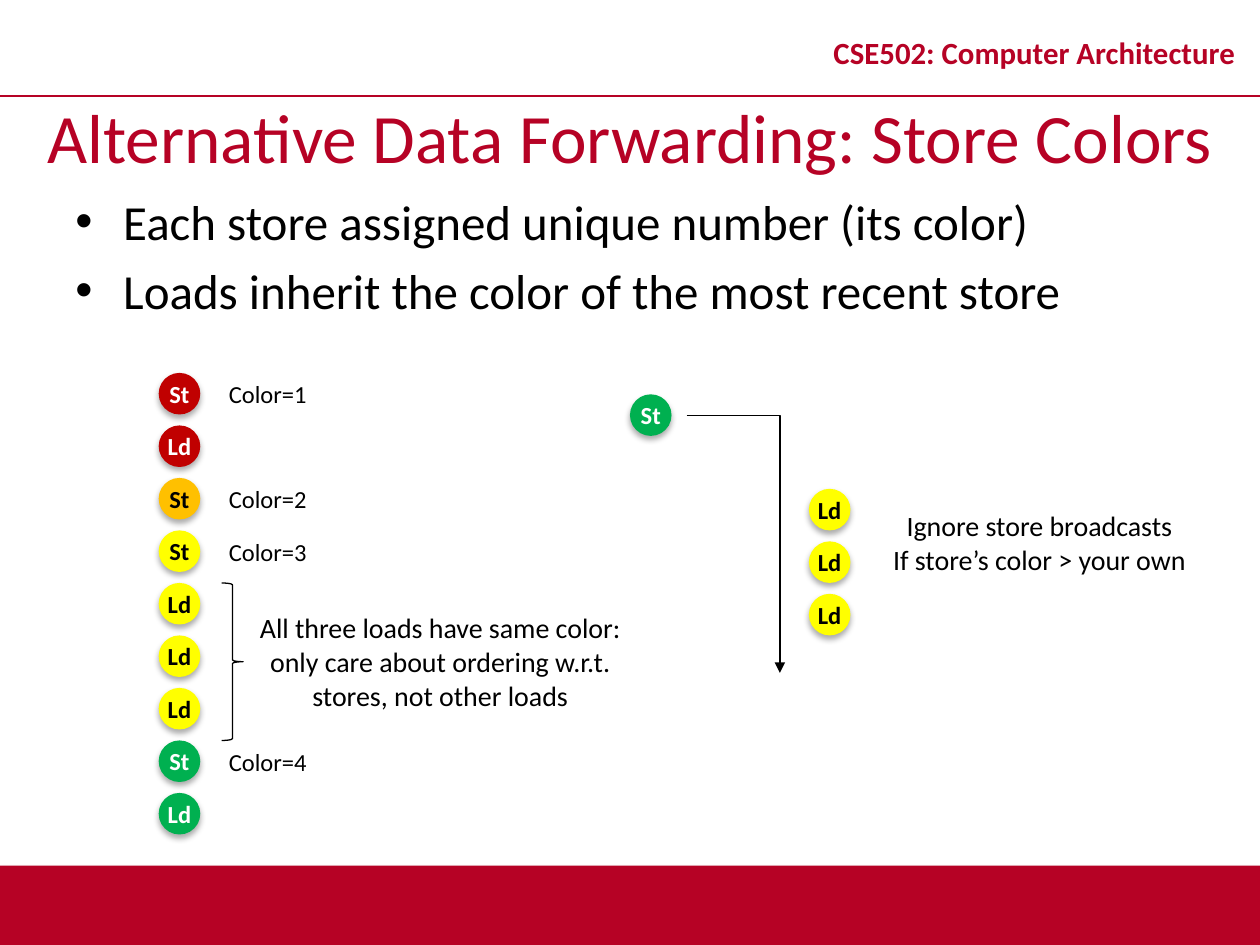
from pptx import Presentation
from pptx.dml.color import RGBColor
from pptx.enum.shapes import MSO_CONNECTOR, MSO_SHAPE
from pptx.enum.text import MSO_ANCHOR, MSO_AUTO_SIZE, PP_ALIGN
from pptx.oxml.ns import qn
from pptx.util import Inches, Pt
from lxml import etree

OVAL, RECT, BRACE = MSO_SHAPE.OVAL, MSO_SHAPE.RECTANGLE, MSO_SHAPE.RIGHT_BRACE
STRAIGHT = MSO_CONNECTOR.STRAIGHT
CENTER, LEFT = PP_ALIGN.CENTER, PP_ALIGN.LEFT
TOP, MIDDLE = MSO_ANCHOR.TOP, MSO_ANCHOR.MIDDLE

FONT = "Calibri"
CRIMSON = RGBColor(0xB6, 0x02, 0x25)
BLACK = RGBColor(0, 0, 0)
WHITE = RGBColor(0xFF, 0xFF, 0xFF)
RED = RGBColor(0xC0, 0, 0)
ORANGE = RGBColor(0xFF, 0xC0, 0)
YELLOW = RGBColor(0xFF, 0xFF, 0)
GREEN = RGBColor(0, 0xB0, 0x50)

COURSE = "CSE502: Computer Architecture"
TITLE = "Alternative Data Forwarding: Store Colors"
BULLETS = ["Each store assigned unique number (its color)",
           "Loads inherit the color of the most recent store"]

# (operation, fill, text color, label) in program order
PROGRAM = [
    ("St", RED, WHITE, "Color=1"),
    ("Ld", RED, WHITE, None),
    ("St", ORANGE, BLACK, "Color=2"),
    ("St", YELLOW, BLACK, "Color=3"),
    ("Ld", YELLOW, BLACK, None),
    ("Ld", YELLOW, BLACK, None),
    ("Ld", YELLOW, BLACK, None),
    ("St", GREEN, WHITE, "Color=4"),
    ("Ld", GREEN, WHITE, None),
]
LISTENING_LOADS = [("Ld", YELLOW, BLACK)] * 3
# (lines, box)
NOTES = [
    (["All three loads have same color:", "only care about ordering w.r.t.",
      "stores, not other loads"], (1.93, 4.8, 3.13, 0.91)),
    (["Ignore store broadcasts", "If store’s color > your own"],
     (6.92, 3.99, 2.66, 0.64)),
]
BROADCAST = [(5.45, 3.3), (6.19, 3.3), (6.19, 5.34)]

NODE = 0.33
STEP = 1.25 / 3
PROGRAM_X, PROGRAM_Y = 1.26, 2.96
LOADS_X, LOADS_Y = 6.42, 3.88

prs = Presentation()
prs.slide_width, prs.slide_height = Inches(10), Inches(7.5)
slide = prs.slides.add_slide(prs.slide_layouts[5])
shapes = slide.shapes


def inches(values):
    return [Inches(v) for v in values]


def write(frame, lines, size, color=BLACK, bold=False, align=CENTER,
          anchor=TOP, wrap=False):
    frame.word_wrap = wrap
    frame.vertical_anchor = anchor
    frame.text = "\n".join(lines)
    for paragraph in frame.paragraphs:
        paragraph.alignment = align
        style = {"name": FONT, "size": Pt(size), "bold": bold}
        for key, value in style.items():
            setattr(paragraph.font, key, value)
        paragraph.font.color.rgb = color


def add_text(box, lines, size, **style):
    frame = shapes.add_textbox(*inches(box)).text_frame
    write(frame, lines, size, **style)
    return frame


def add_shadowed(kind, box, fill, alpha, blur, distance):
    """Add a borderless filled shape with a soft shadow below it."""
    shape = shapes.add_shape(kind, *inches(box))
    shape.fill.solid()
    shape.fill.fore_color.rgb = fill
    shape.line.fill.background()
    shape.shadow.inherit = False
    effects = shape._element.spPr.find(qn("a:effectLst"))
    shadow = etree.SubElement(
        effects, qn("a:outerShdw"), blurRad=str(Pt(blur)),
        dist=str(Pt(distance)), dir="5400000", rotWithShape="0")
    tint = etree.SubElement(shadow, qn("a:srgbClr"), val=str(BLACK))
    etree.SubElement(tint, qn("a:alpha"), val=str(alpha * 1000))
    return shape


def add_node(x, y, operation, fill, color):
    node = add_shadowed(OVAL, (x, y, NODE, NODE), fill, 32, 3.5, 2.2)
    frame = node.text_frame
    frame.margin_left = frame.margin_right = 0
    write(frame, [operation], 14, color, bold=True, anchor=MIDDLE, wrap=True)


def outline(shape, width, color=BLACK):
    shape.line.color.rgb = color
    shape.line.width = Pt(width)


# Header, footer and title
add_shadowed(RECT, (0, 6.87, 10, 0.63), CRIMSON, 35, 3.1, 1.8)
rule = shapes.add_connector(STRAIGHT, *inches((0, 0.76, 10, 0.76)))
outline(rule, 1, CRIMSON)
etree.SubElement(rule._element.spPr, qn("a:effectLst"))
header = add_text((6.42, 0.13, 3.58, 0.63), [COURSE], 17.6, color=CRIMSON,
                  bold=True, anchor=MIDDLE, wrap=True)
header.paragraphs[0].line_spacing = 0.8

title = shapes.title
title.left, title.top, title.width, title.height = inches((0, 0.76, 10, 0.63))
write(title.text_frame, [TITLE], 39.6, CRIMSON, anchor=MIDDLE, wrap=True)

# Bullets
body = add_text((0.5, 1.47, 9, 1.3), BULLETS, 28, align=LEFT, wrap=True)
for index, paragraph in enumerate(body.paragraphs):
    paragraph.space_before = Pt(5.6 if index else 0)
    properties = paragraph._p.get_or_add_pPr()
    properties.set("marL", str(Inches(0.38)))
    properties.set("indent", str(-Inches(0.38)))
    bullet_font = etree.Element(qn("a:buFont"), typeface="Arial")
    bullet = etree.Element(qn("a:buChar"), char="•")
    properties.find(qn("a:defRPr")).addprevious(bullet_font)
    bullet_font.addnext(bullet)

# Program order with store colors
for row, (operation, fill, color, label) in enumerate(PROGRAM):
    y = PROGRAM_Y + row * STEP
    add_node(PROGRAM_X, y, operation, fill, color)
    if label:
        add_text((1.68, y, 0.89, 0.34), [label], 14)

brace = shapes.add_shape(
    BRACE, *inches((1.76, PROGRAM_Y + 4 * STEP, 0.17, 3 * STEP)))
brace.fill.background()
brace.shadow.inherit = False
outline(brace, 0.75)

# Store broadcast to the loads
add_node(5, 3.13, "St", GREEN, WHITE)
for row, load in enumerate(LISTENING_LOADS):
    add_node(LOADS_X, LOADS_Y + row * STEP, *load)

start, *corners = [tuple(inches(point)) for point in BROADCAST]
builder = shapes.build_freeform(*start)
builder.add_line_segments(corners, close=False)
broadcast = builder.convert_to_shape()
broadcast.fill.background()
broadcast.shadow.inherit = False
outline(broadcast, 0.75)
etree.SubElement(broadcast.line._get_or_add_ln(), qn("a:tailEnd"),
                 type="triangle")

for lines, box in NOTES:
    add_text(box, lines, 16).auto_size = MSO_AUTO_SIZE.SHAPE_TO_FIT_TEXT

prs.save("out.pptx")
